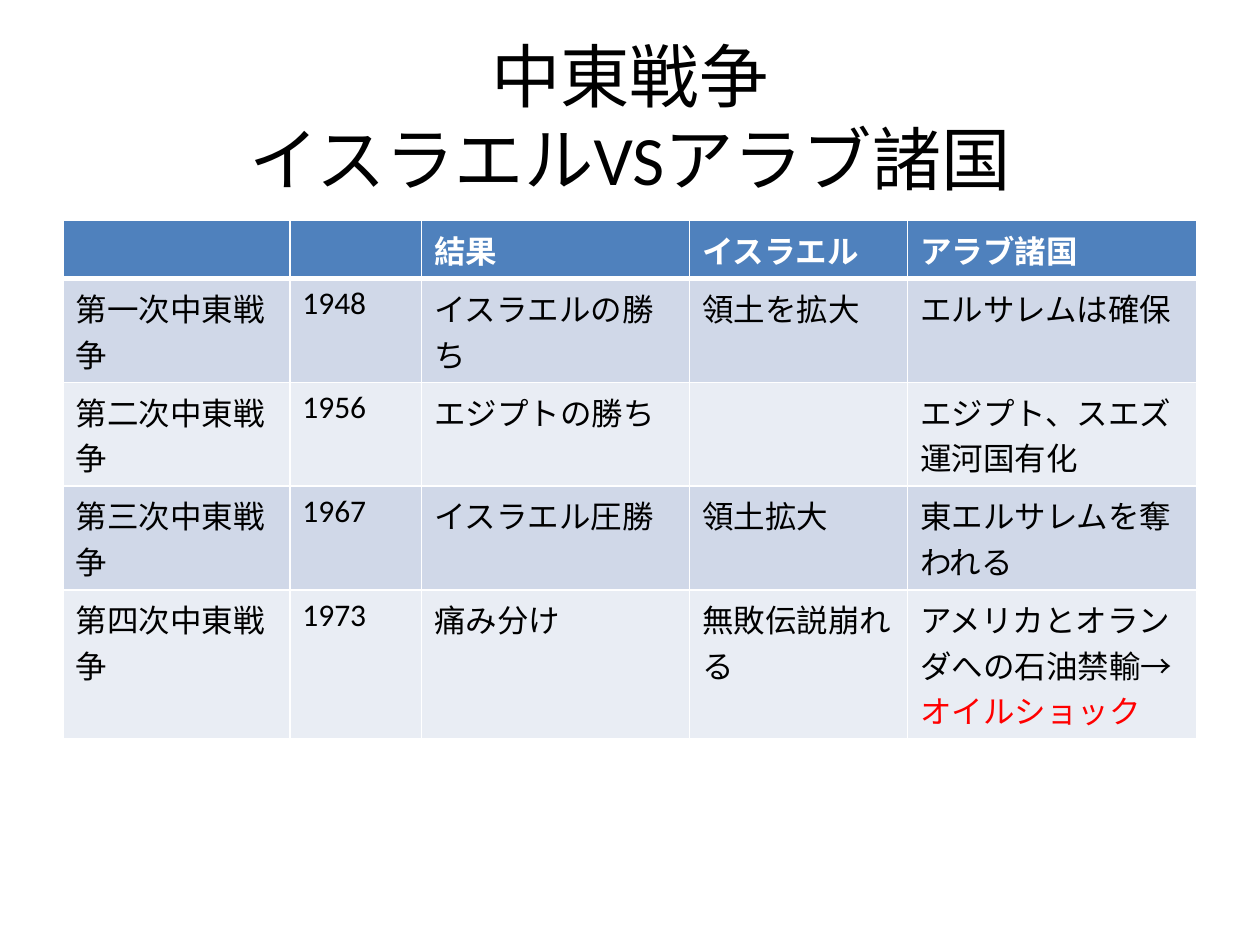
from dataclasses import dataclass

from lxml.etree import SubElement
from pptx import Presentation
from pptx.dml.color import RGBColor as RGB
from pptx.enum.text import MSO_ANCHOR as Anchor, PP_ALIGN as Align
from pptx.oxml.ns import qn
from pptx.util import Pt


@dataclass(frozen=True)
class Theme:
    font: str = "Calibri"
    title_size: float = 39.6
    body_size: float = 18
    text: str = "000000"
    light: str = "FFFFFF"
    accent: str = "FF0000"
    header: str = "4F81BD"
    bands: tuple = ("D0D8E8", "E9EDF4")
    thin: float = 1
    thick: float = 3


class Deck:
    def __init__(self, prs, theme):
        self.theme = theme
        self.slide = prs.slides.add_slide(prs.slide_layouts[6])

    def style(self, p, size, color, bold=False):
        p.font.name = self.theme.font
        p.font.size = Pt(size)
        p.font.bold = bold
        p.font.color.rgb = RGB.from_string(color)

    def title(self, text, left, top, width, height):
        box = self.slide.shapes.add_textbox(Pt(left), Pt(top), Pt(width), Pt(height))
        tf = box.text_frame
        tf.word_wrap = True
        tf.vertical_anchor = Anchor.MIDDLE
        p = tf.paragraphs[0]
        p.text = text
        p.alignment = Align.CENTER
        self.style(p, self.theme.title_size, self.theme.text)

    def borders(self, cell, top, bottom):
        tc_pr = cell._tc.get_or_add_tcPr()
        widths = {"L": self.theme.thin, "R": self.theme.thin, "T": top, "B": bottom}
        for side, width in widths.items():
            ln = SubElement(tc_pr, qn(f"a:ln{side}"), w=str(Pt(width)))
            fill = SubElement(ln, qn("a:solidFill"))
            SubElement(fill, qn("a:srgbClr"), val=self.theme.light)

    def cell(self, cell, content, row):
        t = self.theme
        is_header = row == 0
        self.borders(cell,
                     t.thick if row == 1 else t.thin,
                     t.thick if is_header else t.thin)
        cell.fill.solid()
        cell.fill.fore_color.rgb = RGB.from_string(
            t.header if is_header else t.bands[(row - 1) % 2])
        p = cell.text_frame.paragraphs[0]
        self.style(p, t.body_size, t.light if is_header else t.text, is_header)
        text, *highlights = content.split("|")
        if text:
            p.add_run().text = text
        for highlight in highlights:
            r = p.add_run()
            r.text = highlight
            r.font.color.rgb = RGB.from_string(t.accent)

    def table(self, rows, left, top, widths, heights):
        table = self.slide.shapes.add_table(
            len(rows), len(widths), Pt(left), Pt(top),
            Pt(sum(widths)), Pt(sum(heights))).table
        for column, width in zip(table.columns, widths):
            column.width = Pt(width)
        for row, height in zip(table.rows, heights):
            row.height = Pt(height)
        for i, row in enumerate(rows):
            for j, content in enumerate(row):
                self.cell(table.cell(i, j), content, i)


WARS = [
    ("", "", "結果", "イスラエル", "アラブ諸国"),
    ("第一次中東戦争", "1948", "イスラエルの勝ち", "領土を拡大", "エルサレムは確保"),
    ("第二次中東戦争", "1956", "エジプトの勝ち", "", "エジプト、スエズ運河国有化"),
    ("第三次中東戦争", "1967", "イスラエル圧勝", "領土拡大", "東エルサレムを奪われる"),
    ("第四次中東戦争", "1973", "痛み分け", "無敗伝説崩れる",
     "アメリカとオランダへの石油禁輸→|オイルショック"),
]


def main():
    prs = Presentation()
    prs.slide_width, prs.slide_height = Pt(720), Pt(540)
    deck = Deck(prs, Theme())
    deck.title("中東戦争\vイスラエルVSアラブ諸国", 36, 21.6, 648, 90)
    deck.table(WARS, 36, 126, (129.6, 75.4, 153, 124.6, 165.4),
               (33.2, 59.3, 59.3, 59.3, 85))
    prs.save("out.pptx")


if __name__ == "__main__":
    main()
